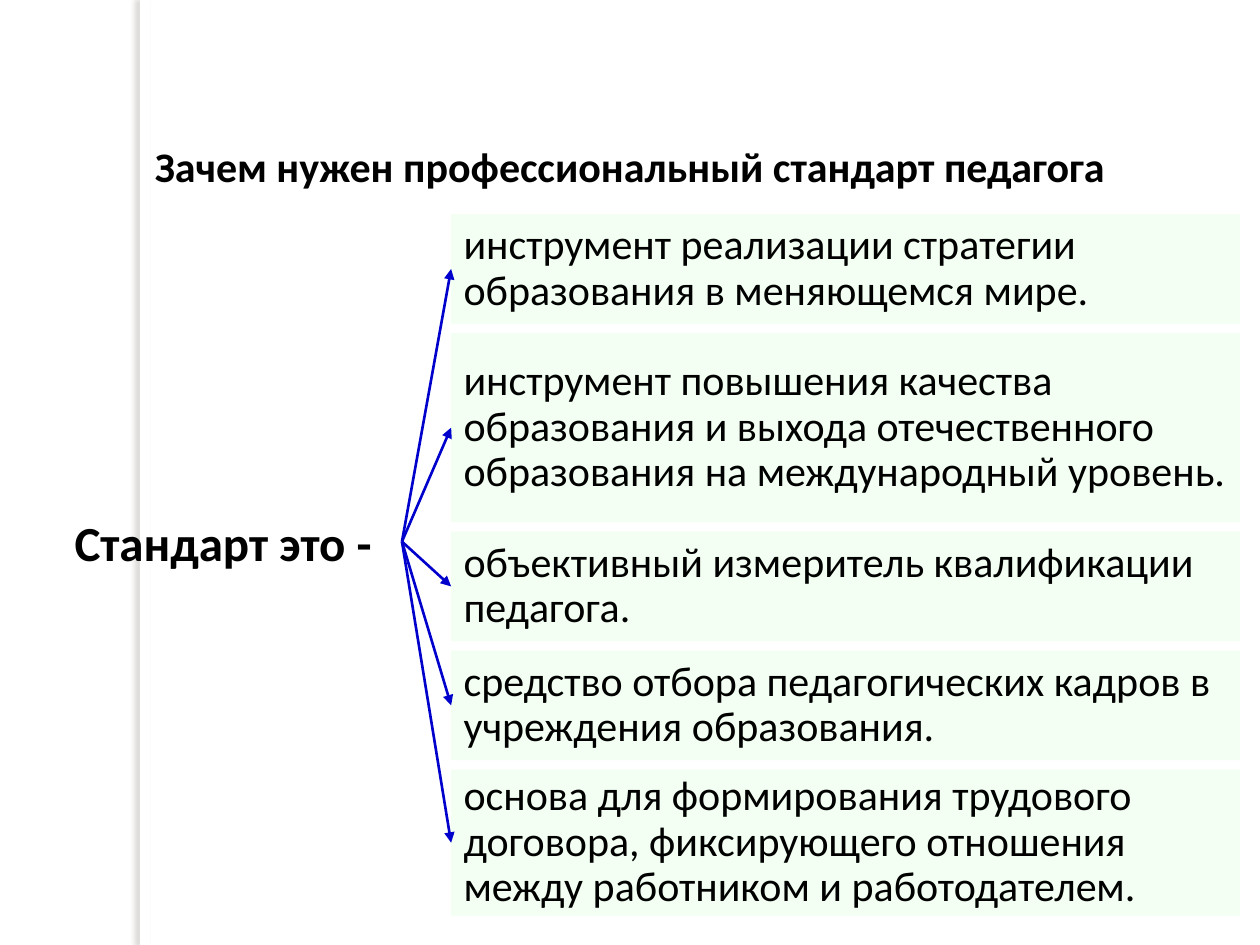
from lxml.etree import SubElement
from pptx import Presentation
from pptx.dml.color import RGBColor
from pptx.enum.shapes import MSO_CONNECTOR, MSO_SHAPE
from pptx.enum.text import MSO_ANCHOR, MSO_AUTO_SIZE, PP_ALIGN
from pptx.oxml.ns import qn
from pptx.util import Pt

FONT = "Calibri"
ARROW_COLOR = "0000CC"
BOX_LEFT, BOX_TOP, BOX_WIDTH, BOX_GAP = 257.8, 122.4, 450.7, 5.4
PURPOSES = [
    (62.6, "инструмент реализации стратегии образования в меняющемся мире."),
    (108, "инструмент повышения качества образования и выхода "
          "отечественного образования на международный уровень."),
    (62.6, "объективный измеритель квалификации педагога."),
    (62.6, "средство отбора педагогических кадров в учреждения образования."),
    (83.5, "основа для формирования трудового договора, фиксирующего "
           "отношения между работником и работодателем."),
]


def rgb(color):
    return RGBColor.from_string(color)


def set_text(sp, text, size, bold=False, align=PP_ALIGN.LEFT):
    tf = sp.text_frame
    tf.word_wrap = True
    tf.vertical_anchor = MSO_ANCHOR.MIDDLE
    p = tf.paragraphs[0]
    p.text = text
    p.alignment = align
    p.font.name, p.font.size, p.font.bold = FONT, Pt(size), bold
    p.font.color.rgb = rgb("000000")
    return p


def add_rect(s, x, y, w, h, color):
    sp = s.shapes.add_shape(MSO_SHAPE.RECTANGLE, Pt(x), Pt(y), Pt(w), Pt(h))
    sp.shadow.inherit = False
    sp.fill.solid()
    sp.fill.fore_color.rgb = rgb(color)
    sp.line.fill.background()
    return sp


def add_side_strip(s):
    sp = add_rect(s, 80, 0, 5.8, 540, "FFFFFF")
    effects = sp._element.spPr.find(qn("a:effectLst"))
    shadow = SubElement(effects, qn("a:outerShdw"), blurRad=str(Pt(3)),
                        dist=str(Pt(3)), dir="10800000", rotWithShape="0")
    color = SubElement(shadow, qn("a:srgbClr"), val="736F63")
    SubElement(color, qn("a:alpha"), val="25000")


def add_heading(s, x, y, w, h, text, size):
    sp = s.shapes.add_textbox(Pt(x), Pt(y), Pt(w), Pt(h))
    set_text(sp, text, size, bold=True, align=PP_ALIGN.CENTER)
    return sp


def add_purpose(s, y, h, text):
    sp = add_rect(s, BOX_LEFT, y, BOX_WIDTH, h, "CCFFCC")
    color = sp._element.spPr.find(qn("a:solidFill"))[0]
    SubElement(color, qn("a:alpha"), val="25000")
    set_text(sp, text, 24).line_spacing = 0.9
    return sp


def add_arrow(s, start, end):
    c = s.shapes.add_connector(MSO_CONNECTOR.STRAIGHT, 0, 0, 0, 0)
    c.begin_connect(start, 3)
    c.end_connect(end, 1)
    c.line.color.rgb = rgb(ARROW_COLOR)
    c.line.width = Pt(1.5)
    SubElement(c.line._get_or_add_ln(), qn("a:tailEnd"), type="triangle")
    SubElement(c._element.spPr, qn("a:effectLst"))


def main():
    prs = Presentation()
    prs.slide_width, prs.slide_height = Pt(720), Pt(540)
    s = prs.slides.add_slide(prs.slide_layouts[6])

    # Side strip and title
    add_side_strip(s)
    title = add_heading(s, 0, 77, 720, 36,
                        "Зачем нужен профессиональный стандарт педагога", 24)
    title.text_frame.vertical_anchor = MSO_ANCHOR.TOP
    title.text_frame.auto_size = MSO_AUTO_SIZE.SHAPE_TO_FIT_TEXT

    # Purposes, stacked with equal gaps
    boxes = []
    y = BOX_TOP
    for h, text in PURPOSES:
        boxes.append(add_purpose(s, y, h, text))
        y += h + BOX_GAP

    # Label with an arrow to each purpose
    label = add_heading(s, 25.2, 286.8, 204.5, 45.4, "Стандарт это -", 28)
    label.text_frame.margin_left = label.text_frame.margin_right = 0
    for box in boxes:
        add_arrow(s, label, box)

    prs.save("out.pptx")


if __name__ == "__main__":
    main()
